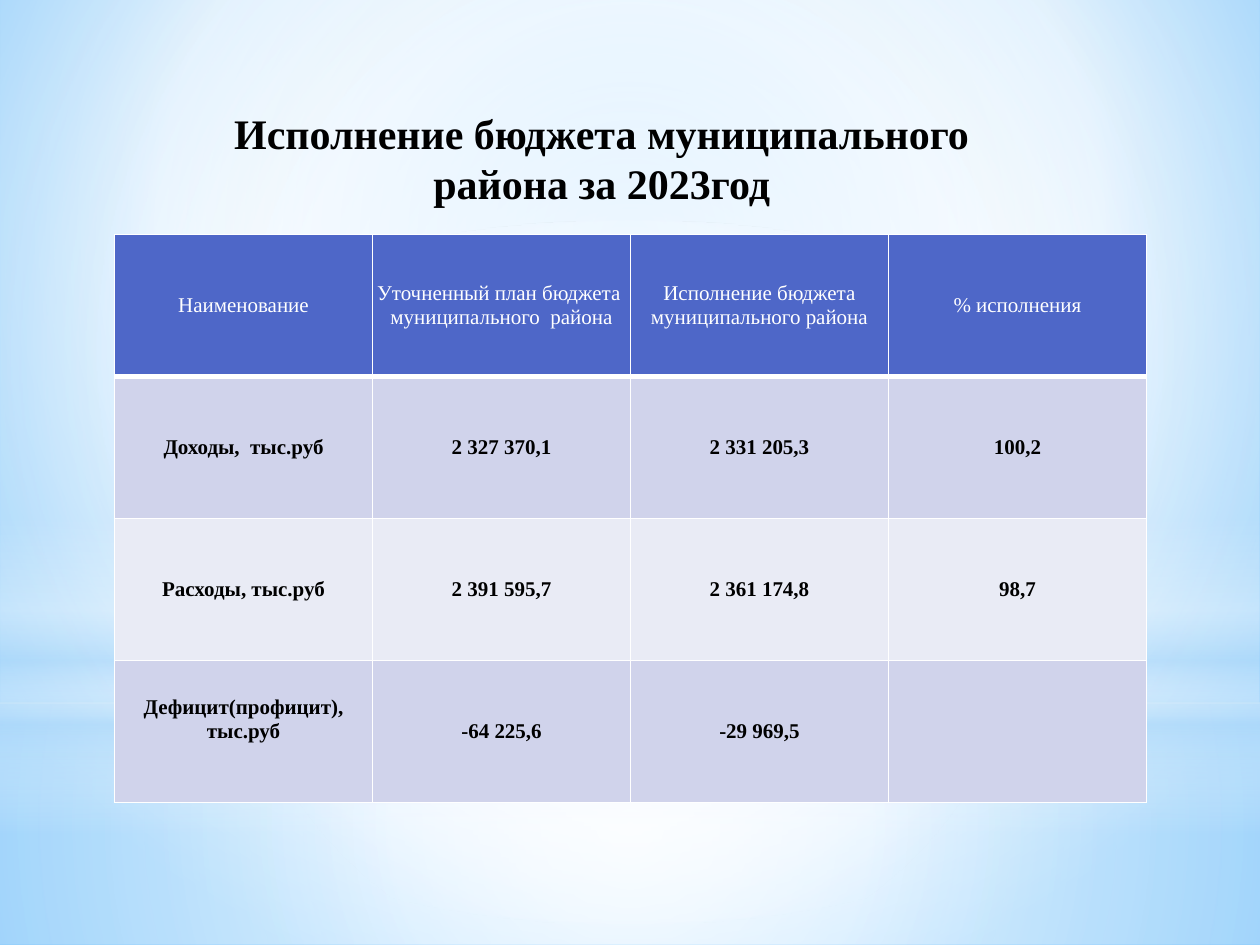
import pptx
import pptx.dml.color
import pptx.enum.shapes
import pptx.enum.text
import pptx.util
from lxml import etree
from pptx.oxml.ns import qn

Inches = pptx.util.Inches
Pt = pptx.util.Pt
FONT = "Times New Roman"
WHITE, BLACK = "FFFFFF", "000000"
PALE_BLUE = "B4DCFA"
HEADER_FILL = "4E67C8"
BAND_FILLS = ("D0D3EB", "E9EBF5")
TITLE = "Исполнение бюджета муниципального района за 2023год"
BUDGET = (
    ("Наименование", "Уточненный план бюджета  муниципального  района",
     "Исполнение бюджета муниципального района", "% исполнения"),
    ("Доходы,  тыс.руб", "2 327 370,1", "2 331 205,3", "100,2"),
    ("Расходы, тыс.руб", "2 391 595,7", "2 361 174,8", "98,7"),
    ("Дефицит(профицит), тыс.руб", "-64 225,6", "-29 969,5", ""),
)
CENTER = (50, 50, 50, 50)
RECTANGLE = pptx.enum.shapes.MSO_SHAPE.RECTANGLE
OVAL = pptx.enum.shapes.MSO_SHAPE.OVAL
# Shape, top, height, gradient stops (position, colour, opacity), focus
GLOWS = (
    (RECTANGLE, 5.58, 1.92, ((0, WHITE, 91), (37, WHITE, 76), (100, PALE_BLUE, 79)), CENTER),
    (RECTANGLE, 0, 5.58, ((0, WHITE, 89), (48, WHITE, 62), (100, PALE_BLUE, 79)), CENTER),
    (RECTANGLE, 4.12, 2.5, ((0, WHITE, 0), (29, WHITE, 30), (45, PALE_BLUE, 40),
                            (55, WHITE, 26), (65, PALE_BLUE, 60), (100, WHITE, 0)), None),
    (OVAL, 1.75, 5.58, ((0, WHITE, 100), (56, WHITE, 0)), CENTER),
)


def color(value):
    return pptx.dml.color.RGBColor.from_string(value)


def paint_gradient(fill, owner, stops, focus):
    """Fill with a circular gradient around focus, or a vertical one without it."""
    fill.gradient()
    gradient = owner.find(".//" + qn("a:gradFill"))
    gradient.clear()
    stop_list = etree.SubElement(gradient, qn("a:gsLst"))
    for position, value, opacity in stops:
        stop = etree.SubElement(stop_list, qn("a:gs"), pos=str(position * 1000))
        shade = etree.SubElement(stop, qn("a:srgbClr"), val=value)
        if opacity < 100:
            etree.SubElement(shade, qn("a:alpha"), val=str(opacity * 1000))
    if focus:
        circle = etree.SubElement(gradient, qn("a:path"), {"path": "circle"})
        sides = {side: str(inset * 1000) for side, inset in zip("ltrb", focus)}
        etree.SubElement(circle, qn("a:fillToRect"), sides)
    else:
        etree.SubElement(gradient, qn("a:lin"), ang="5400000", scaled="0")


def add_glow(page, kind, top, height, stops, focus):
    glow = page.shapes.add_shape(kind, 0, Inches(top), Inches(10), Inches(height))
    glow.shadow.inherit = False
    glow.line.fill.background()
    paint_gradient(glow.fill, glow._element.spPr, stops, focus)


def write_text(para, text, size, value, bold):
    para.alignment = pptx.enum.text.PP_ALIGN.CENTER
    span = para.add_run()
    span.text = text
    span.font.name = FONT
    span.font.size = Pt(size)
    span.font.bold = bold
    span.font.color.rgb = color(value)


def place_title(page):
    title = page.shapes.title
    page.shapes._spTree.append(title._element)  # in front of the glows
    title.left, title.top = Inches(1.25), Inches(0.8)
    title.width, title.height = Inches(7), Inches(5.31)
    frame = title.text_frame
    frame.word_wrap = True
    frame.auto_size = pptx.enum.text.MSO_AUTO_SIZE.NONE
    frame.vertical_anchor = pptx.enum.text.MSO_ANCHOR.TOP
    para = frame.paragraphs[0]
    para.space_before, para.space_after = Pt(4.8), Pt(3)
    para._p.get_or_add_pPr().set("marL", str(Inches(0.05)))
    write_text(para, TITLE, 24, BLACK, True)


def set_borders(cell, widths):
    """Draw white borders; widths in points for left, right, top and bottom."""
    properties = cell._tc.get_or_add_tcPr()
    for side, width in zip("LRTB", widths):
        line = etree.SubElement(properties, qn("a:ln" + side), w=str(Pt(width)))
        solid = etree.SubElement(line, qn("a:solidFill"))
        etree.SubElement(solid, qn("a:srgbClr"), val=WHITE)


def add_budget_table(page):
    rows, columns = len(BUDGET), len(BUDGET[0])
    table = page.shapes.add_table(rows, columns, Inches(0.91), Inches(1.86),
                                  Inches(8.19), Inches(4.51)).table
    for row, texts in enumerate(BUDGET):
        header = row == 0
        for column, text in enumerate(texts):
            cell = table.cell(row, column)
            cell.vertical_anchor = pptx.enum.text.MSO_ANCHOR.MIDDLE
            set_borders(cell, (1, 1, 3 if row == 1 else 1, 3 if header else 1))
            cell.fill.solid()
            cell.fill.fore_color.rgb = color(HEADER_FILL if header else BAND_FILLS[(row - 1) % 2])
            if header and column in (1, 2):
                cell.margin_left = cell.margin_right = Inches(0.01)
            if text:
                write_text(cell.text_frame.paragraphs[0], text, 12,
                           WHITE if header else BLACK, not header)
    table.cell(rows - 1, 0).margin_bottom = Inches(0.24)


def main():
    deck = pptx.Presentation()
    deck.slide_width, deck.slide_height = Inches(10), Inches(7.5)
    page = deck.slides.add_slide(deck.slide_layouts[5])
    paint_gradient(page.background.fill, page._element,
                   ((0, "9ED5FF", 100), (60, WHITE, 100), (100, "5BB9FF", 100)),
                   (20, 10, 20, 60))
    for glow in GLOWS:
        add_glow(page, *glow)
    place_title(page)
    add_budget_table(page)
    deck.save("out.pptx")


if __name__ == "__main__":
    main()
